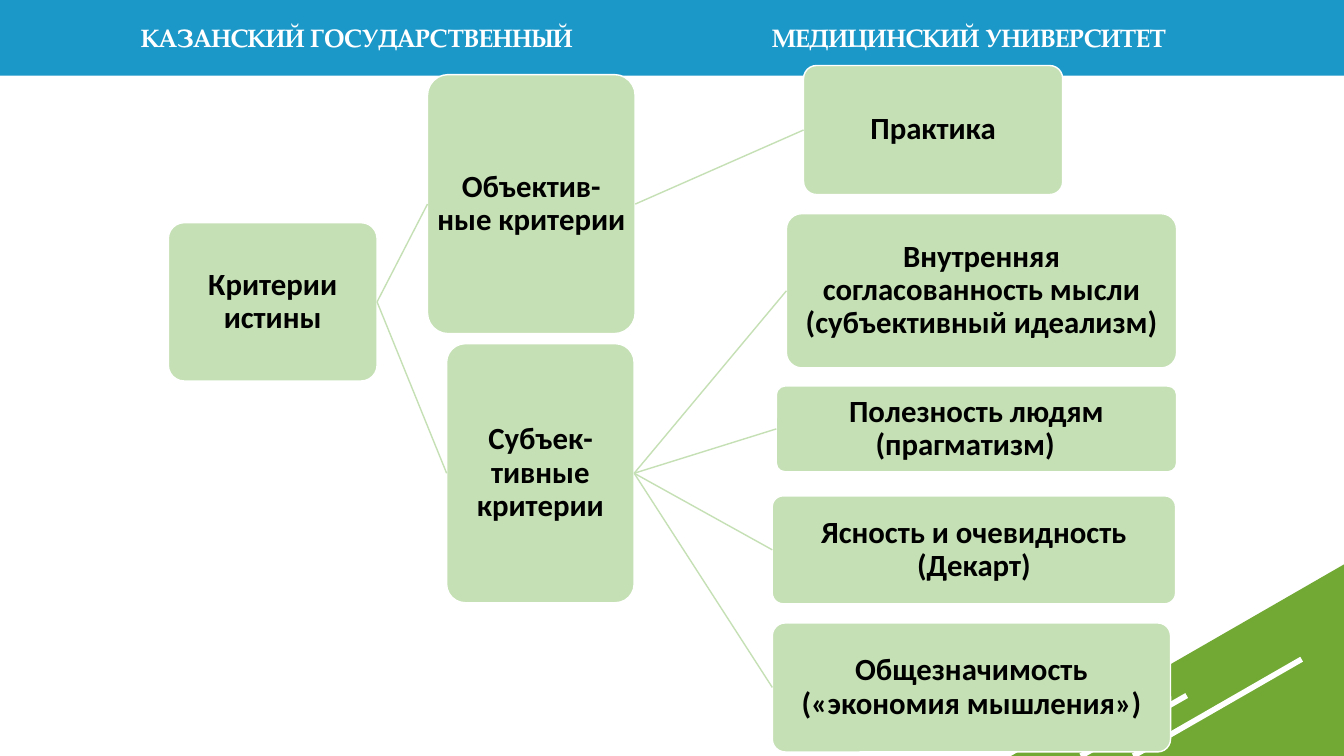
from lxml import etree
from pptx import Presentation
from pptx.dml.color import RGBColor as Rgb
from pptx.enum.shapes import MSO_CONNECTOR as Conn, MSO_SHAPE as Kind
from pptx.enum.text import MSO_ANCHOR as Anchor, PP_ALIGN as Align
from pptx.oxml.ns import qn
from pptx.util import Inches, Pt

HUES = {
    "band": "1B97C8",
    "leaf": "71A934",
    "node": "C5E0B4",
    "white": "FFFFFF",
    "ink": "000000",
}
LEFT, RIGHT = 1, 3  # connection sites of a rounded box


class Deck:
    def __init__(self, wide, high):
        self.show = Presentation()
        self.show.slide_width = Inches(wide)
        self.show.slide_height = Inches(high)
        self.slide = self.show.slides.add_slide(self.show.slide_layouts[6])
        self.items = self.slide.shapes

    def hue(self, name):
        return Rgb.from_string(HUES[name])

    def shape(self, kind, area, fill, edge=None):
        item = self.items.add_shape(kind, *map(Inches, area))
        item.shadow.inherit = False
        item.fill.solid()
        item.fill.fore_color.rgb = self.hue(fill)
        if edge:
            item.line.color.rgb = self.hue(edge)
            item.line.width = Pt(1)
        else:
            item.line.fill.background()
        return item

    def words(self, frame, text, size, face, color, align):
        frame.word_wrap = True
        frame.text = text
        para = frame.paragraphs[0]
        para.alignment = align
        font = para.font
        font.size, font.name, font.bold = Pt(size), face, True
        font.color.rgb = self.hue(color)
        return para

    def label(self, area, text, align):
        box = self.items.add_textbox(*map(Inches, area))
        self.words(box.text_frame, text, 18, "TeX Gyre Pagella", "white", align)

    def node(self, area, text):
        item = self.shape(Kind.ROUNDED_RECTANGLE, area, "node", "white")
        item.adjustments[0] = 0.1
        frame = item.text_frame
        frame.margin_left = frame.margin_right = Inches(0.02)
        frame.margin_top = frame.margin_bottom = Inches(0.02)
        frame.vertical_anchor = Anchor.MIDDLE
        para = self.words(frame, text, 22, "Calibri", "ink", Align.CENTER)
        para.line_spacing = 0.9
        return item

    def line(self, start, end, color, width):
        ends = map(Inches, (*start, *end))
        item = self.items.add_connector(Conn.STRAIGHT, *ends)
        item.line.color.rgb = self.hue(color)
        item.line.width = Pt(width)
        etree.SubElement(item._element.spPr, qn("a:effectLst"))
        return item

    def link(self, head, child):
        item = self.line((0, 0), (1, 1), "node", 1)
        item.begin_connect(head, RIGHT)
        item.end_connect(child, LEFT)


def main():
    deck = Deck(13.33, 7.5)

    # Header band and corner
    deck.shape(Kind.RECTANGLE, (0, 0, 13.33, 0.75), "band")
    corner = deck.shape(Kind.RIGHT_TRIANGLE, (10.03, 5.6, 3.3, 1.9), "leaf")
    corner._element.spPr.xfrm.set("flipH", "1")
    deck.line((10.72, 7.5), (11.77, 6.9), "white", 4)
    deck.line((11.24, 7.5), (12.91, 6.54), "white", 4)
    deck.label((0.92, 0.17, 4.86, 0.4), "КАЗАНСКИЙ ГОСУДАРСТВЕННЫЙ", Align.RIGHT)
    deck.label((7.56, 0.17, 4.86, 0.4), "МЕДИЦИНСКИЙ УНИВЕРСИТЕТ", Align.LEFT)

    # Tree of criteria: each branch with its leaves
    tree = [
        ((4.24, 0.74, 2.06, 2.57), "Объектив-ные критерии", [
            ((7.97, 0.65, 2.57, 1.28), "Практика"),
        ]),
        ((4.43, 3.41, 1.86, 2.57), "Субъек-тивные критерии", [
            ((7.8, 2.12, 3.87, 1.53),
             "Внутренняя согласованность мысли (субъективный идеализм)"),
            ((7.7, 3.83, 3.97, 0.85), "Полезность людям (прагматизм)\t"),
            ((7.66, 4.92, 4, 1.07), "Ясность и очевидность (Декарт)"),
            ((7.66, 6.18, 3.95, 1.28), "Общезначимость («экономия мышления»)"),
        ]),
    ]
    root = deck.node((1.67, 2.21, 2.07, 1.57), "Критерии истины")
    for area, text, leaves in tree:
        branch = deck.node(area, text)
        deck.link(root, branch)
        for spot, name in leaves:
            deck.link(branch, deck.node(spot, name))

    deck.show.save("out.pptx")


if __name__ == "__main__":
    main()
